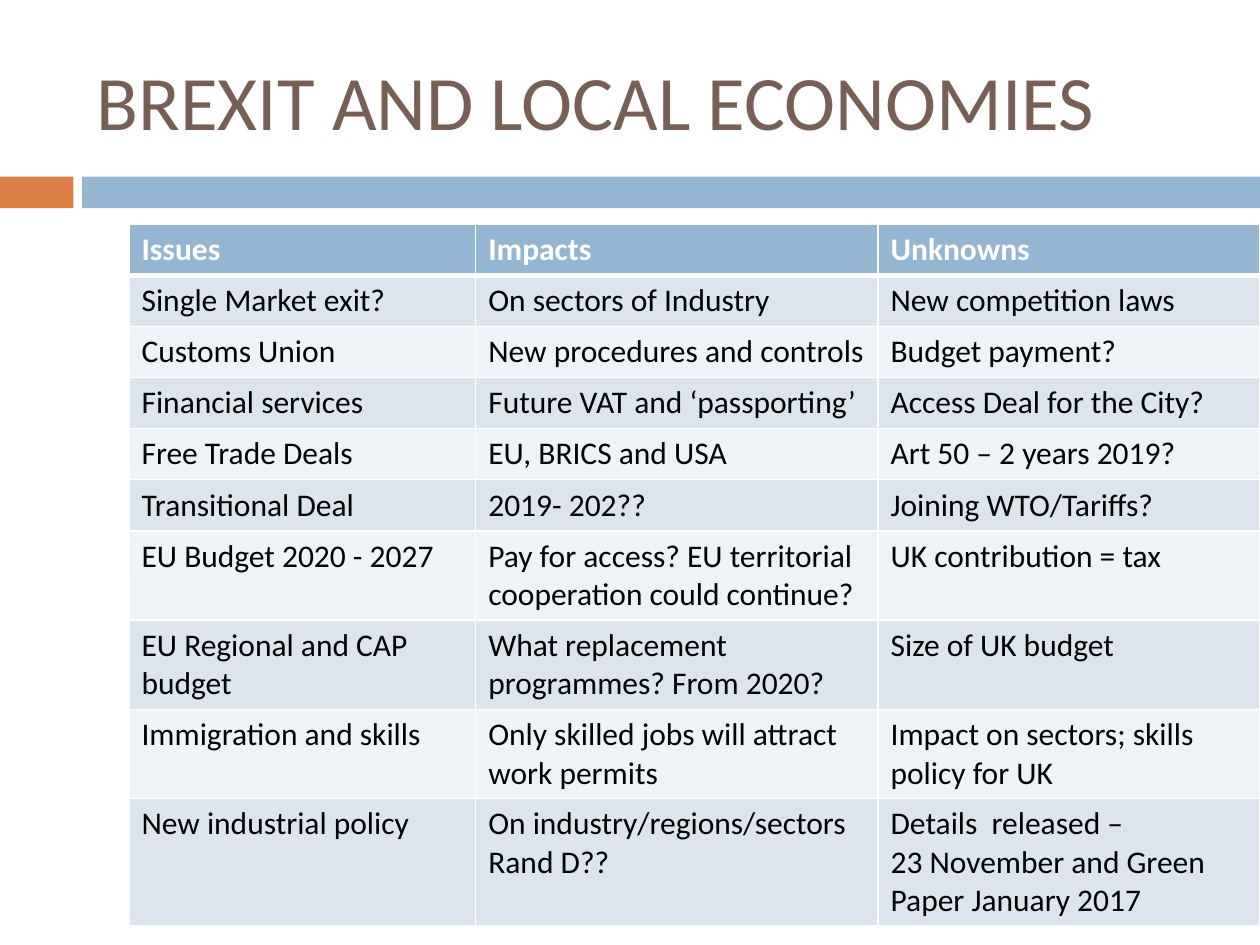
from lxml.etree import SubElement
from pptx import Presentation
from pptx.dml.color import RGBColor
from pptx.enum.shapes import MSO_SHAPE as Shape
from pptx.enum.text import MSO_ANCHOR as Anchor
from pptx.oxml.ns import qn
from pptx.util import Cm, Pt

BLUE, ORANGE, BROWN = "94B6D2", "DD8047", "775F55"
WHITE, BLACK = "FFFFFF", "000000"
BANDS = ["DCE5EE", "EEF3F7"]


def paint(target, color):
    """Give a fill or a font a solid colour."""
    if hasattr(target, "solid"):
        target.solid()
        target.fore_color.rgb = RGBColor.from_string(color)
    else:
        target.color.rgb = RGBColor.from_string(color)


def add_borders(cell, bottom_width, top_width):
    """Draw white lines around a cell; they must come before its fill."""
    properties = cell._tc.get_or_add_tcPr()
    widths = {"a:lnL": 1, "a:lnR": 1, "a:lnT": top_width, "a:lnB": bottom_width}
    for side, width in widths.items():
        line = SubElement(properties, qn(side), w=str(Pt(width)))
        fill = SubElement(line, qn("a:solidFill"))
        SubElement(fill, qn("a:srgbClr"), val=WHITE)


deck = Presentation()
deck.slide_width, deck.slide_height = Cm(25.4), Cm(19.05)
slide = deck.slides.add_slide(deck.slide_layouts[6])

# Bar under the title
for left, width, color in [(0, 1.48, ORANGE), (1.65, 23.75, BLUE)]:
    bar = slide.shapes.add_shape(Shape.RECTANGLE, Cm(left), Cm(3.56), Cm(width), Cm(0.64))
    bar.shadow.inherit = False
    paint(bar.fill, color)
    bar.line.fill.background()

# Title
title = slide.shapes.add_textbox(Cm(1.7), Cm(0.64), Cm(22.66), Cm(2.74))
frame = title.text_frame
frame.word_wrap = True
frame.vertical_anchor = Anchor.MIDDLE
frame.text = "BREXIT AND LOCAL ECONOMIES"
font = frame.paragraphs[0].runs[0].font
font.name, font.size = "Calibri", Pt(44)
paint(font, BROWN)

# Table: text of the three columns, then the number of lines in the row
rows = [
    ("Issues", "Impacts", "Unknowns", 1),
    ("Single Market exit?", "On sectors of Industry", "New competition laws", 1),
    ("Customs Union", "New procedures and controls", "Budget payment?", 1),
    ("Financial services", "Future VAT and ‘passporting’", "Access Deal for the City?", 1),
    ("Free Trade Deals", "EU, BRICS and USA", "Art 50 – 2 years 2019?", 1),
    ("Transitional Deal", "2019- 202??", "Joining WTO/Tariffs?", 1),
    ("EU Budget 2020 - 2027", "Pay for access? EU territorial cooperation could continue?",
     "UK contribution = tax", 2),
    ("EU Regional and CAP budget", "What replacement programmes? From 2020?",
     "Size of UK budget", 2),
    ("Immigration and skills", "Only skilled jobs will attract work permits",
     "Impact on sectors; skills policy for UK", 2),
    ("New industrial policy", "On industry/regions/sectors Rand D??",
     "Details  released –\n23 November and Green Paper January 2017", 3),
]
column_widths = [6.99, 8.11, 7.7]
row_heights = [1.03 + 0.77 * (lines - 1) for *texts, lines in rows]

table = slide.shapes.add_table(
    len(rows), len(column_widths), Cm(2.6), Cm(4.52),
    Cm(sum(column_widths)), Cm(sum(row_heights))).table
for column, width in zip(table.columns, column_widths):
    column.width = Cm(width)

for row_index, (*texts, lines) in enumerate(rows):
    table.rows[row_index].height = Cm(row_heights[row_index])
    is_header = row_index == 0
    for column_index, text in enumerate(texts):
        cell = table.cell(row_index, column_index)
        cell.text_frame.text = text
        add_borders(cell, 3 if is_header else 1, 3 if row_index == 1 else 1)
        paint(cell.fill, BLUE if is_header else BANDS[(row_index - 1) % 2])
        for para in cell.text_frame.paragraphs:
            for span in para.runs:
                span.font.name, span.font.size = "Calibri", Pt(18)
                span.font.bold = is_header
                paint(span.font, WHITE if is_header else BLACK)

deck.save("out.pptx")
